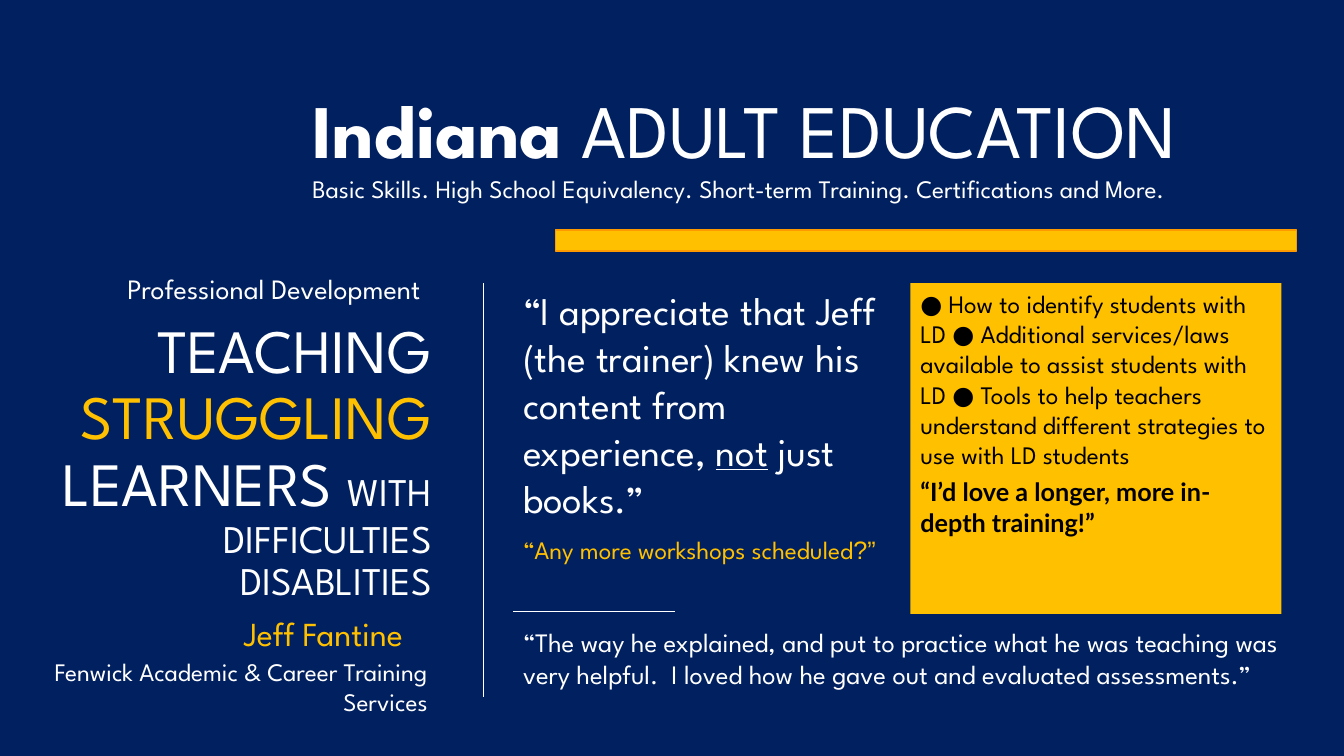
from lxml.etree import SubElement
from pptx import Presentation
from pptx.dml.color import RGBColor
from pptx.enum.shapes import MSO_CONNECTOR, MSO_SHAPE
from pptx.enum.text import MSO_ANCHOR, PP_ALIGN
from pptx.oxml.ns import qn
from pptx.util import Inches, Pt

NAVY, GOLD, ORANGE, WHITE, BLACK = "002060", "FFC000", "FF9900", "FFFFFF", "000000"


def color(value):
    return RGBColor.from_string(value)


class FlyerSlide:
    font = "League Spartan"

    def __init__(self, presentation):
        self.slide = presentation.slides.add_slide(presentation.slide_layouts[6])
        background = self.slide.background.fill
        background.solid()
        background.fore_color.rgb = color(NAVY)

    def paragraph(self, frame, runs, size, fill=WHITE, align=PP_ALIGN.LEFT,
                  gap=0, name=None, bold=False, spacing=None):
        """Add a paragraph; runs is a string or a list of (text, font settings)."""
        started = bool(frame.paragraphs[0].runs)
        paragraph = frame.add_paragraph() if started else frame.paragraphs[0]
        paragraph.alignment = align
        if gap:
            paragraph.space_before = Pt(gap)
        if spacing:
            paragraph.line_spacing = spacing
        paragraph.font.name = name or self.font
        paragraph.font.size = Pt(size)
        paragraph.font.color.rgb = color(fill)
        paragraph.font.bold = bold
        for text, settings in [(runs, {})] if isinstance(runs, str) else runs:
            run = paragraph.add_run()
            run.text = text
            for key, value in settings.items():
                if key == "fill":
                    run.font.color.rgb = color(value)
                else:
                    setattr(run.font, key, value)

    def text_box(self, left, top, width, height):
        shape = self.slide.shapes.add_textbox(
            Inches(left), Inches(top), Inches(width), Inches(height))
        shape.text_frame.word_wrap = True
        return shape.text_frame

    def rectangle(self, left, top, width, height, fill, line=None):
        shape = self.slide.shapes.add_shape(
            MSO_SHAPE.RECTANGLE, Inches(left), Inches(top), Inches(width), Inches(height))
        shape.shadow.inherit = False
        shape.fill.solid()
        shape.fill.fore_color.rgb = color(fill)
        if line:
            shape.line.color.rgb = color(line)
            shape.line.width = Pt(1)
        else:
            shape.line.fill.background()
        shape.text_frame.word_wrap = True
        shape.text_frame.vertical_anchor = MSO_ANCHOR.TOP
        return shape.text_frame

    def rule(self, left, top, right, bottom):
        connector = self.slide.shapes.add_connector(
            MSO_CONNECTOR.STRAIGHT, Inches(left), Inches(top), Inches(right), Inches(bottom))
        connector.line.color.rgb = color(WHITE)
        connector.line.width = Pt(0.75)
        SubElement(connector._element.spPr, qn("a:effectLst"))


def main():
    presentation = Presentation()
    presentation.slide_width = Inches(13.33)
    presentation.slide_height = Inches(7.5)
    flyer = FlyerSlide(presentation)
    right = PP_ALIGN.RIGHT

    # Header and gold bar
    header = flyer.text_box(3, 0.77, 11.07, 1.62)
    flyer.paragraph(header, [("Indiana", {"bold": True}), (" ADULT EDUCATION", {})], 54)
    flyer.paragraph(
        header,
        "Basic Skills. High School Equivalency. Short-term Training. Certifications and More.",
        18)
    flyer.rectangle(5.51, 2.28, 7.35, 0.21, GOLD, ORANGE)

    # Course title and trainer
    flyer.paragraph(flyer.text_box(0.24, 2.64, 4.03, 0.44),
                    "Professional Development", 20, align=right)
    title = flyer.text_box(0.27, 3.05, 4.11, 3.02)
    title.vertical_anchor = MSO_ANCHOR.MIDDLE
    title.margin_top = Inches(0.1)
    flyer.paragraph(
        title,
        [("TEACHING ", {}), ("STRUGGLING ", {"fill": GOLD}), ("LEARNERS ", {}),
         ("WITH DIFFICULTIES", {"size": Pt(28)})],
        44, align=right, spacing=0.9)
    flyer.paragraph(title, "DISABLITIES", 28, align=right, spacing=0.9)
    flyer.paragraph(flyer.text_box(2.32, 6.03, 3.33, 0.5), "Jeff Fantine", 24, GOLD)
    flyer.paragraph(flyer.text_box(0.1, 6.46, 4.24, 0.71),
                    "Fenwick Academic & Career Training Services", 18, align=right)

    # Participant quotes
    quotes = flyer.text_box(5.09, 2.79, 3.7, 3.23)
    flyer.paragraph(
        quotes,
        [("“I appreciate that Jeff (the trainer) knew his content from experience, ", {}),
         ("not", {"underline": True}), (" just books.”", {})],
        28)
    flyer.paragraph(
        quotes, [("“Any more workshops scheduled", {}), ("?”", {"name": "Arial"})],
        18, GOLD, gap=9.5)
    flyer.paragraph(
        flyer.text_box(5.09, 6.16, 7.85, 1.06),
        "“The way he explained, and put to practice what he was teaching was very helpful.  "
        "I loved how he gave out and evaluated assessments.”",
        19)

    # Dividers
    flyer.rule(4.8, 2.81, 4.8, 6.91)
    flyer.rule(5.09, 6.07, 6.69, 6.07)

    # Gold topic panel
    topics = flyer.rectangle(9.03, 2.81, 3.68, 3.28, GOLD)
    flyer.paragraph(
        topics,
        "● How to identify students with LD ● Additional services/laws available to assist "
        "students with LD ● Tools to help teachers understand different strategies to use "
        "with LD students",
        18, BLACK)
    flyer.paragraph(topics, "“I’d love a longer, more in-depth training!”",
                    18, BLACK, gap=5, name="Lato", bold=True)

    presentation.save("out.pptx")


if __name__ == "__main__":
    main()
